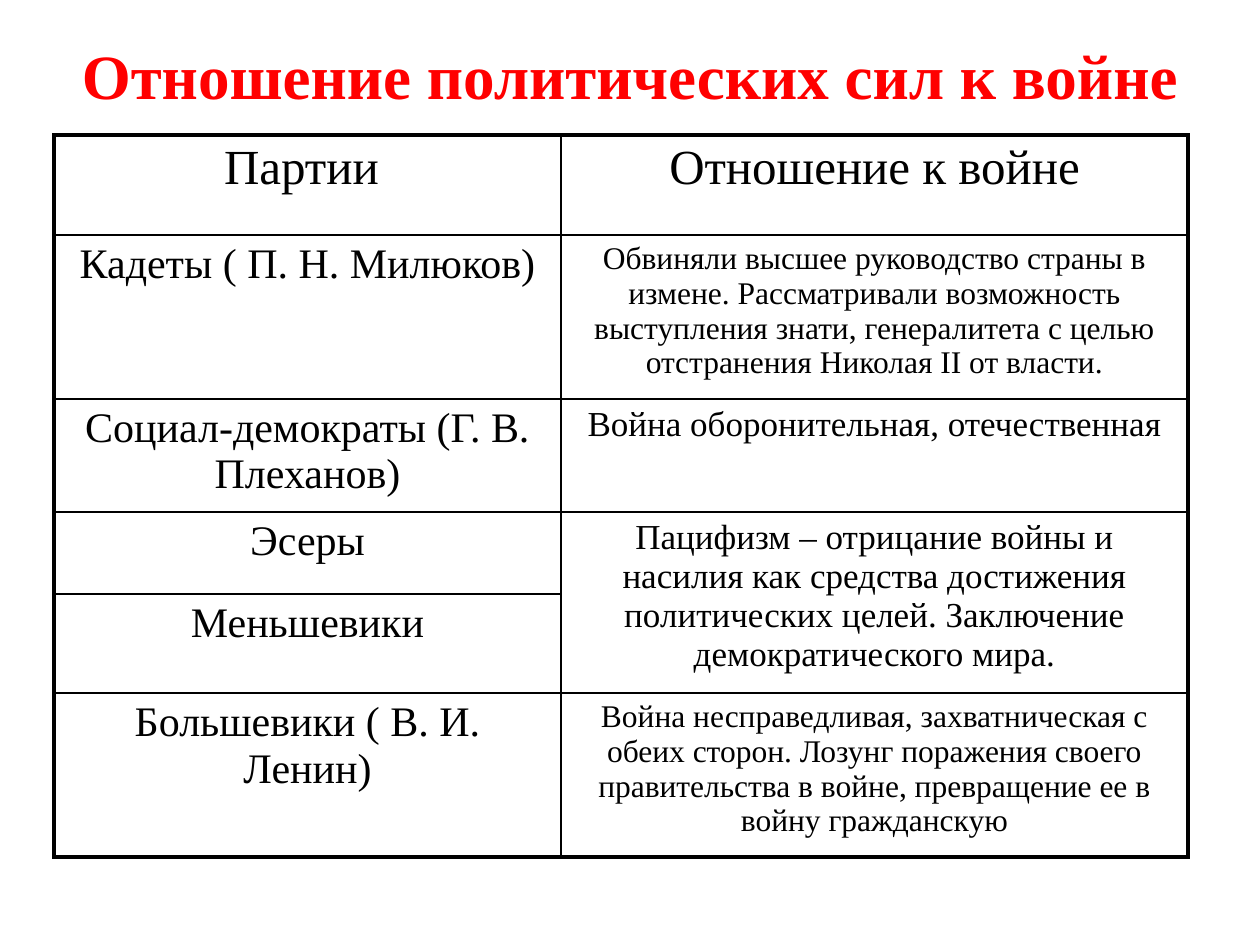
from dataclasses import dataclass

import pptx
import pptx.dml.color
import pptx.enum.text
import pptx.oxml.ns
import pptx.util
from lxml import etree

PX = 914400 // 126


@dataclass(frozen=True)
class Theme:
    font: str = "Times New Roman"
    title_color: str = "FF0000"
    ink: str = "000000"
    title: int = 36
    header: int = 28
    party: int = 24
    view: int = 20
    long_view: int = 18
    outer_line: float = 2.25
    inner_line: float = 1


@dataclass(frozen=True)
class Text:
    text: str
    size: int
    color: str
    bold: bool = False


@dataclass(frozen=True)
class Row:
    height: int
    party: str
    view: str
    party_size: int
    view_size: int


THEME = Theme()
COLUMNS = (507, 627)
ROWS = (
    Row(100, "Партии ", "Отношение к войне", THEME.header, THEME.header),
    Row(103, "Кадеты ( П. Н. Милюков)",
        "Обвиняли высшее руководство страны в измене. Рассматривали возможность "
        "выступления знати, генералитета с целью отстранения Николая II от власти.",
        THEME.party, THEME.long_view),
    Row(96, "Социал-демократы (Г. В. Плеханов)",
        "Война оборонительная, отечественная", THEME.party, THEME.view),
    Row(82, "Эсеры",
        "Пацифизм – отрицание войны и насилия как средства достижения "
        "политических целей. Заключение демократического мира.",
        THEME.party, THEME.view),
    Row(77, "Меньшевики", "", THEME.party, THEME.view),
    Row(103, "Большевики ( В. И. Ленин)",
        "Война несправедливая, захватническая с обеих сторон. Лозунг поражения "
        "своего правительства в войне, превращение ее в войну гражданскую",
        THEME.party, THEME.long_view),
)
MERGED_ROWS = (3, 4)


def px(n: int) -> pptx.util.Emu:
    return pptx.util.Emu(n * PX)


def apply(obj, values: dict) -> None:
    for name, value in values.items():
        setattr(obj, name, value)


def write(tf, item: Text) -> None:
    p = tf.paragraphs[0]
    p.alignment = pptx.enum.text.PP_ALIGN.CENTER
    r = p.add_run()
    r.text = item.text
    apply(r.font, {"name": THEME.font, "size": pptx.util.Pt(item.size), "bold": item.bold})
    r.font.color.rgb = pptx.dml.color.RGBColor.from_string(item.color)


def draw_border(cell, side: str, outer: bool) -> None:
    qn = pptx.oxml.ns.qn
    width = pptx.util.Pt(THEME.outer_line if outer else THEME.inner_line)
    ln = etree.SubElement(cell._tc.get_or_add_tcPr(), qn(f"a:ln{side}"), w=str(int(width)))
    fill = etree.SubElement(ln, qn("a:solidFill"))
    etree.SubElement(fill, qn("a:srgbClr"), val=THEME.ink)


def draw_title(s, item: Text) -> None:
    sp = s.shapes.add_textbox(px(63), px(38), px(1134), px(87))
    tf = sp.text_frame
    apply(tf, {
        "word_wrap": True,
        "vertical_anchor": pptx.enum.text.MSO_ANCHOR.BOTTOM,
        "margin_bottom": pptx.util.Inches(0.1),
    })
    write(tf, item)


def draw_table(s, rows: tuple[Row, ...]) -> None:
    last_row, last_col = len(rows) - 1, len(COLUMNS) - 1
    sp = s.shapes.add_table(len(rows), len(COLUMNS), px(54), px(135), px(sum(COLUMNS)), px(722))
    table = sp.table
    apply(table, {"first_row": False, "horz_banding": False})
    for column, width in zip(table.columns, COLUMNS):
        column.width = px(width)
    for i, row in enumerate(rows):
        table.rows[i].height = px(row.height)
        texts = (Text(row.party, row.party_size, THEME.ink), Text(row.view, row.view_size, THEME.ink))
        for j, item in enumerate(texts):
            cell = table.cell(i, j)
            edges = {"L": j == 0, "R": j == last_col, "T": i == 0, "B": i == last_row}
            for side, outer in edges.items():
                draw_border(cell, side, outer)
            cell.fill.background()
            if item.text:
                write(cell.text_frame, item)
    first, last = MERGED_ROWS
    table.cell(first, last_col).merge(table.cell(last, last_col))
    sp.height = px(722)


def main() -> None:
    prs = pptx.Presentation()
    apply(prs, {"slide_width": px(1260), "slide_height": px(945)})
    s = prs.slides.add_slide(prs.slide_layouts[6])
    draw_title(s, Text("Отношение политических сил к войне", THEME.title, THEME.title_color, True))
    draw_table(s, ROWS)
    prs.save("out.pptx")


if __name__ == "__main__":
    main()
